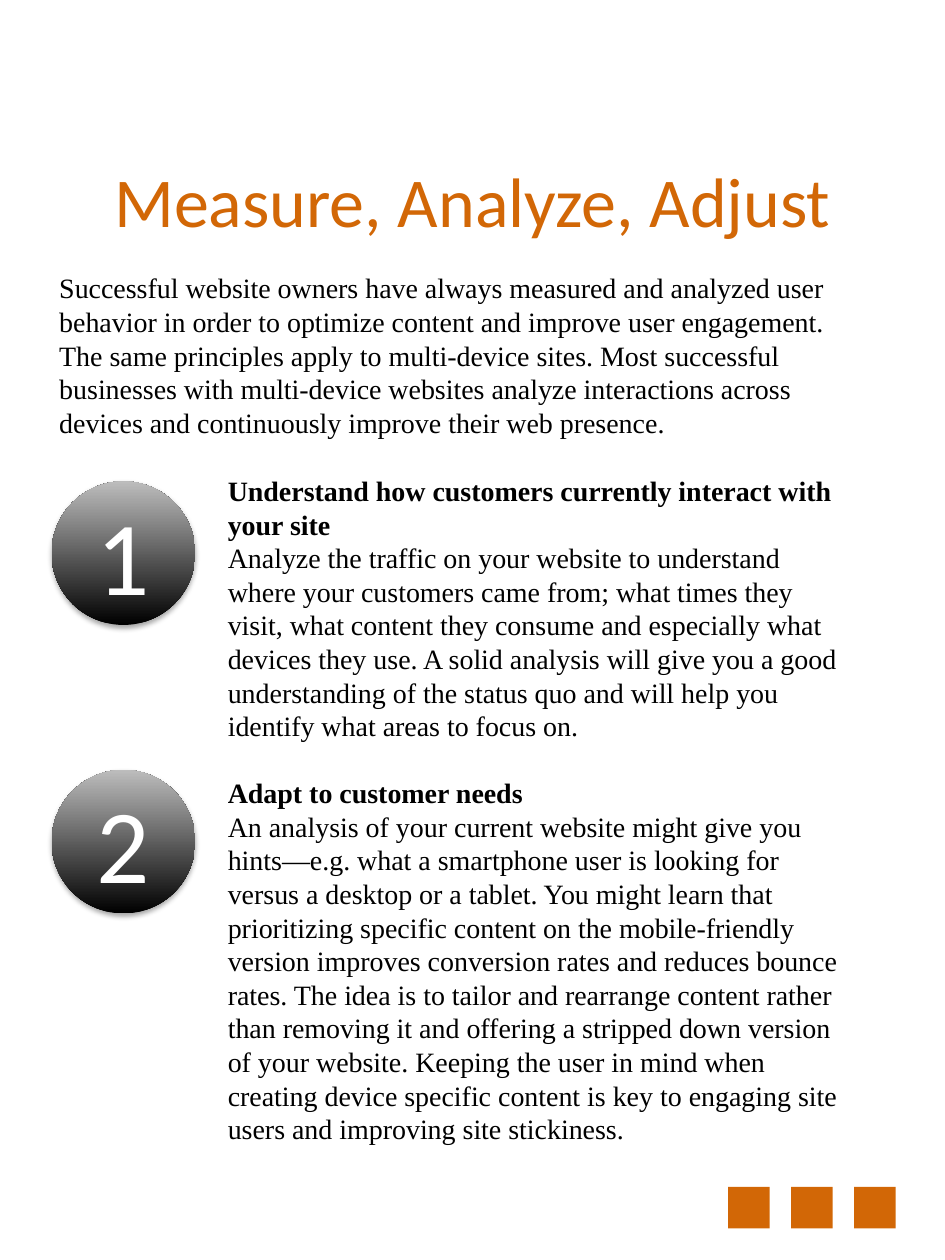
from lxml.etree import SubElement
from pptx import Presentation
from pptx.dml.color import RGBColor
from pptx.enum.shapes import MSO_SHAPE
from pptx.enum.text import MSO_ANCHOR, MSO_AUTO_SIZE, PP_ALIGN
from pptx.oxml.ns import qn
from pptx.util import Inches, Pt

ORANGE = RGBColor(0xD2, 0x67, 0x06)
BLACK = RGBColor(0, 0, 0)
SILVER = RGBColor(0xBD, 0xBD, 0xBD)
WHITE = RGBColor(0xFF, 0xFF, 0xFF)

INTRO = (
    "Successful website owners have always measured and analyzed user behavior in order to "
    "optimize content and improve user engagement. The same principles apply to multi-device "
    "sites. Most successful businesses with multi-device websites analyze interactions across "
    "devices and continuously improve their web presence."
)
STEPS = [
    (
        "Understand how customers currently interact with your site",
        "Analyze the traffic on your website to understand where your customers came from; what "
        "times they visit, what content they consume and especially what devices they use. A "
        "solid analysis will give you a good understanding of the status quo and will help you "
        "identify what areas to focus on.",
    ),
    (
        "Adapt to customer needs",
        "An analysis of your current website might give you hints—e.g. what a smartphone user is "
        "looking for versus a desktop or a tablet. You might learn that prioritizing specific "
        "content on the mobile-friendly version improves conversion rates and reduces bounce "
        "rates. The idea is to tailor and rearrange content rather than removing it and offering "
        "a stripped down version of your website. Keeping the user in mind when creating device "
        "specific content is key to engaging site users and improving site stickiness.",
    ),
]


class PageBuilder:
    heading_font = "Calibri"
    text_font = "Times New Roman"
    text_size = 16
    line_pitch = 19.2

    def __init__(self, page):
        self.page = page

    def place(self, shape, left, top, width, height):
        shape.left, shape.top = Inches(left), Inches(top)
        shape.width, shape.height = Inches(width), Inches(height)

    def format_runs(self, para, font, size, color):
        for span in para.runs:
            span.font.name = font
            span.font.size = Pt(size)
            span.font.color.rgb = color

    def title(self, text, *bounds):
        box = self.page.shapes.title
        self.place(box, *bounds)
        frame = box.text_frame
        frame.text = text
        frame.vertical_anchor = MSO_ANCHOR.MIDDLE
        frame.paragraphs[0].alignment = PP_ALIGN.CENTER
        self.format_runs(frame.paragraphs[0], self.heading_font, 40, ORANGE)

    def body(self, text, *bounds):
        box = self.page.placeholders[1]
        self.place(box, *bounds)
        frame = box.text_frame
        frame.text = text
        frame.auto_size = MSO_AUTO_SIZE.NONE
        para = frame.paragraphs[0]
        para.line_spacing = Pt(self.line_pitch)
        properties = para._p.get_or_add_pPr()
        properties.set("marL", "0")
        properties.set("indent", "0")
        SubElement(properties, qn("a:buNone"))
        self.format_runs(para, self.text_font, self.text_size, BLACK)

    def steps(self, steps, *bounds):
        """Write each step as a bold heading with its explanation below."""
        box = self.page.shapes.add_textbox(*map(Inches, bounds))
        frame = box.text_frame
        frame.word_wrap = True
        for index, (heading, detail) in enumerate(steps):
            para = frame.add_paragraph() if index else frame.paragraphs[0]
            para.text = f"{heading}\v{detail}"
            para.line_spacing = Pt(self.line_pitch)
            para.space_before = Pt(self.line_pitch if index else 0)
            self.format_runs(para, self.text_font, self.text_size, BLACK)
            para.runs[0].font.bold = True

    def badge(self, text, left, top, size):
        """Draw a numbered, shaded circle with a soft shadow."""
        circle = self.page.shapes.add_shape(
            MSO_SHAPE.OVAL, Inches(left), Inches(top), Inches(size), Inches(size)
        )
        circle.line.fill.background()
        circle.fill.gradient()
        circle.fill.gradient_angle = 90
        for stop, position, color in zip(circle.fill.gradient_stops, (0, 1), (BLACK, SILVER)):
            stop.position = position
            stop.color.rgb = color
        effects = SubElement(circle._element.spPr, qn("a:effectLst"))
        shadow = SubElement(
            effects, qn("a:outerShdw"), blurRad=str(Pt(3.1)), dist=str(Pt(1.8)),
            dir="5400000", rotWithShape="0",
        )
        shade = SubElement(shadow, qn("a:srgbClr"), val=str(BLACK))
        SubElement(shade, qn("a:alpha"), val="35000")
        frame = circle.text_frame
        frame.text = text
        frame.vertical_anchor = MSO_ANCHOR.MIDDLE
        frame.paragraphs[0].alignment = PP_ALIGN.CENTER
        self.format_runs(frame.paragraphs[0], self.heading_font, 60, WHITE)

    def square(self, left, top, size):
        tile = self.page.shapes.add_shape(
            MSO_SHAPE.RECTANGLE, Inches(left), Inches(top), Inches(size), Inches(size)
        )
        tile.shadow.inherit = False
        tile.fill.solid()
        tile.fill.fore_color.rgb = ORANGE
        tile.line.fill.background()


def main():
    deck = Presentation()
    deck.slide_width, deck.slide_height = Inches(7.5), Inches(10)
    builder = PageBuilder(deck.slides.add_slide(deck.slide_layouts[1]))

    builder.title("Measure, Analyze, Adjust", 0, 0.97, 7.5, 1.23)
    for column in range(3):
        builder.square(5.78 + column * 0.5, 9.42, 0.33)
    builder.body(INTRO, 0.37, 2.1, 6.61, 1.63)
    builder.steps(STEPS, 1.71, 3.71, 5.07, 5.76)
    for number, top in enumerate((3.82, 6.11), start=1):
        builder.badge(str(number), 0.41, top, 1.14)

    deck.save("out.pptx")


if __name__ == "__main__":
    main()
